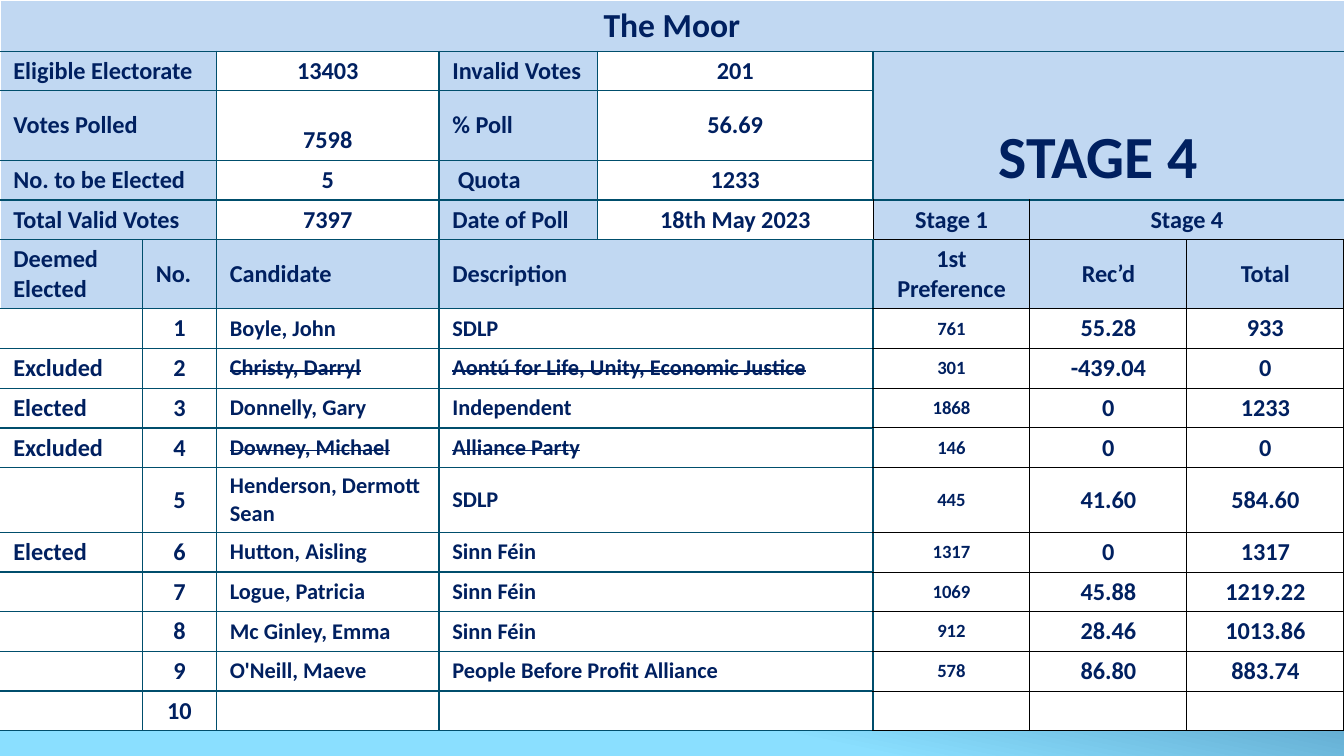
from dataclasses import dataclass
from typing import NamedTuple

from lxml.etree import SubElement
from pptx import Presentation
from pptx.dml.color import RGBColor
from pptx.enum.text import MSO_ANCHOR, PP_ALIGN
from pptx.oxml.ns import qn
from pptx.util import Pt

NAVY, PALE_BLUE, WHITE = "002060", "C1D8F2", "FFFFFF"
FIRST_COLUMNS = [76.3, 39.7, 119.2, 84.9, 147.6]
STAGE_COLUMN = (720 - sum(FIRST_COLUMNS)) / 3
COLUMN_WIDTHS = FIRST_COLUMNS + [STAGE_COLUMN] * 3
ROW_HEIGHTS = [26.6, 20.2, 37.2, 20.2, 20.2, 34.6] + [20.2] * 10
TABLE_HEIGHT = 386.6
NO_STYLE = "{2D5ABB26-0587-4C30-8999-92F81FD0307C}"


class Border(NamedTuple):
    color: str
    width: float


TEAL_LINE = Border("004E6C", 0.75)
BLACK_LINE = Border("000000", 0.5)
WHITE_LINE = Border(WHITE, 1)


@dataclass
class Block:
    """A table cell, or a merged group of cells, with its text format."""
    row: int
    column: int
    text: str = ""
    columns: int = 1
    rows: int = 1
    fill: str = WHITE
    size: float = 13
    centered: bool = False
    struck: bool = False
    anchor: MSO_ANCHOR = MSO_ANCHOR.MIDDLE
    left_inset: float = 7.2
    right_inset: float = 7.2


class Candidate(NamedTuple):
    status: str
    name: str
    party: str
    first_preference: str
    received: str
    total: str


SUMMARY = [
    ("Eligible Electorate", "13403", "Invalid Votes", "201"),
    ("Votes Polled", "7598", "% Poll", "56.69"),
    ("No. to be Elected", "5", "Quota", "1233"),
    ("Total Valid Votes", "7397", "Date of Poll", "18th May 2023"),
]
CANDIDATES = [
    Candidate("", "Boyle, John", "SDLP", "761", "55.28", "933"),
    Candidate("Excluded", "Christy, Darryl", "Aontú for Life, Unity, Economic Justice",
              "301", "-439.04", "0"),
    Candidate("Elected", "Donnelly, Gary", "Independent", "1868", "0", "1233"),
    Candidate("Excluded", "Downey, Michael", "Alliance Party", "146", "0", "0"),
    Candidate("", "Henderson, Dermott Sean", "SDLP", "445", "41.60", "584.60"),
    Candidate("Elected", "Hutton, Aisling", "Sinn Féin", "1317", "0", "1317"),
    Candidate("", "Logue, Patricia", "Sinn Féin", "1069", "45.88", "1219.22"),
    Candidate("", "Mc Ginley, Emma", "Sinn Féin", "912", "28.46", "1013.86"),
    Candidate("", "O'Neill, Maeve", "People Before Profit Alliance", "578", "86.80", "883.74"),
    Candidate("", "", "", "", "", ""),
]


def rgb(color: str) -> RGBColor:
    return RGBColor.from_string(color)


def write_text(cell, text: str, *, size: float, centered: bool, struck: bool) -> None:
    paragraph = cell.text_frame.paragraphs[0]
    paragraph.alignment = PP_ALIGN.CENTER if centered else PP_ALIGN.LEFT
    if not text:
        # An empty cell would otherwise take the height of 18 pt text.
        SubElement(paragraph._p, qn("a:endParaRPr"), sz=str(int(size * 100)))
        return
    run = paragraph.add_run()
    run.text = text
    run.font.name = "Calibri"
    run.font.size = Pt(size)
    run.font.bold = True
    run.font.color.rgb = rgb(NAVY)
    if struck:
        run.font._element.set("strike", "sngStrike")


def borders_of(block: Block) -> dict[str, Border]:
    """Left, right, top and bottom lines, chosen by the block's place in the table."""
    if block.row == 0:
        return {"L": WHITE_LINE, "R": WHITE_LINE, "T": WHITE_LINE, "B": TEAL_LINE}
    if block.rows > 1:
        return {"L": TEAL_LINE, "R": WHITE_LINE, "T": TEAL_LINE, "B": BLACK_LINE}
    if block.column >= 5:
        return dict.fromkeys("LRTB", BLACK_LINE)
    meets_stages = block.row >= 4 and block.column + block.columns == 5
    return {"L": WHITE_LINE if block.column == 0 else TEAL_LINE,
            "R": BLACK_LINE if meets_stages else TEAL_LINE,
            "T": TEAL_LINE, "B": TEAL_LINE}


def draw_border(cell, side: str, border: Border) -> None:
    properties = cell._tc.get_or_add_tcPr()
    line = SubElement(properties, qn(f"a:ln{side}"), w=str(Pt(border.width)))
    fill = SubElement(line, qn("a:solidFill"))
    SubElement(fill, qn("a:srgbClr"), val=border.color)


def draw_block(table, block: Block) -> None:
    last_row = block.row + block.rows - 1
    last_column = block.column + block.columns - 1
    origin = table.cell(block.row, block.column)
    if block.rows * block.columns > 1:
        origin.merge(table.cell(last_row, last_column))
    borders = borders_of(block)
    for row in range(block.row, last_row + 1):
        for column in range(block.column, last_column + 1):
            cell = table.cell(row, column)
            cell.margin_top = cell.margin_bottom = Pt(2.7)
            cell.margin_left, cell.margin_right = Pt(block.left_inset), Pt(block.right_inset)
            cell.vertical_anchor = block.anchor
            outer = {"L": column == block.column, "R": column == last_column,
                     "T": row == block.row, "B": row == last_row}
            for side, border in borders.items():
                if outer[side]:
                    draw_border(cell, side, border)
            cell.fill.solid()
            cell.fill.fore_color.rgb = rgb(block.fill)
            write_text(cell, block.text if cell is origin or (row, column) ==
                       (block.row, block.column) else "",
                       size=block.size if (row, column) == (block.row, block.column) else 10,
                       centered=block.centered, struck=block.struck)


def heading_blocks() -> list[Block]:
    blocks = [
        Block(0, 0, "The Moor", columns=8, fill=PALE_BLUE, size=18, centered=True),
        Block(1, 5, "STAGE 4", columns=3, rows=3, fill=PALE_BLUE, size=32, centered=True,
              anchor=MSO_ANCHOR.BOTTOM, right_inset=18),
        Block(4, 5, "Stage 1", fill=PALE_BLUE, centered=True),
        Block(4, 6, "Stage 4", columns=2, fill=PALE_BLUE, centered=True),
        Block(5, 3, "Description", columns=2, fill=PALE_BLUE),
    ]
    for column, text in enumerate(["Deemed Elected", "No.", "Candidate"]):
        blocks.append(Block(5, column, text, fill=PALE_BLUE))
    for column, text in enumerate(["1st Preference", "Rec’d", "Total"], start=5):
        blocks.append(Block(5, column, text, fill=PALE_BLUE, centered=True))
    return blocks


def summary_blocks() -> list[Block]:
    blocks = []
    for row, (label, value, second_label, second_value) in enumerate(SUMMARY, start=1):
        anchor = MSO_ANCHOR.BOTTOM if label == "Votes Polled" else MSO_ANCHOR.MIDDLE
        inset = 10.1 if second_label == "Quota" else 7.2
        blocks += [
            Block(row, 0, label, columns=2, fill=PALE_BLUE),
            Block(row, 2, value, centered=True, anchor=anchor),
            Block(row, 3, second_label, fill=PALE_BLUE, left_inset=inset),
            Block(row, 4, second_value, centered=True),
        ]
    return blocks


def candidate_blocks() -> list[Block]:
    blocks = []
    for number, candidate in enumerate(CANDIDATES, start=1):
        row = number + 5
        struck = candidate.status == "Excluded"
        blocks += [
            Block(row, 0, candidate.status),
            Block(row, 1, str(number), centered=True),
            Block(row, 2, candidate.name, size=12, struck=struck),
            Block(row, 3, candidate.party, columns=2, size=12, struck=struck),
            Block(row, 5, candidate.first_preference, size=10, centered=True),
            Block(row, 6, candidate.received, centered=True),
            Block(row, 7, candidate.total, centered=True),
        ]
    return blocks


def main() -> None:
    presentation = Presentation()
    presentation.slide_width, presentation.slide_height = Pt(720), Pt(405)
    slide = presentation.slides.add_slide(presentation.slide_layouts[6])
    background = slide.background.fill
    background.gradient()
    background.gradient_angle = 258
    for stop, (position, color) in zip(background.gradient_stops,
                                       [(0.42, "0D3868"), (0.82, "8ADFFF")]):
        stop.position = position
        stop.color.rgb = rgb(color)

    shape = slide.shapes.add_table(len(ROW_HEIGHTS), len(COLUMN_WIDTHS),
                                   Pt(0), Pt(0), Pt(720), Pt(TABLE_HEIGHT))
    table = shape.table
    table.first_row = table.horz_banding = False
    table._tbl.tblPr.find(qn("a:tableStyleId")).text = NO_STYLE
    for column, width in zip(table.columns, COLUMN_WIDTHS):
        column.width = Pt(width)
    for row, height in zip(table.rows, ROW_HEIGHTS):
        row.height = Pt(height)
    shape.height = Pt(TABLE_HEIGHT)
    for block in heading_blocks() + summary_blocks() + candidate_blocks():
        draw_block(table, block)
    presentation.save("out.pptx")


if __name__ == "__main__":
    main()
